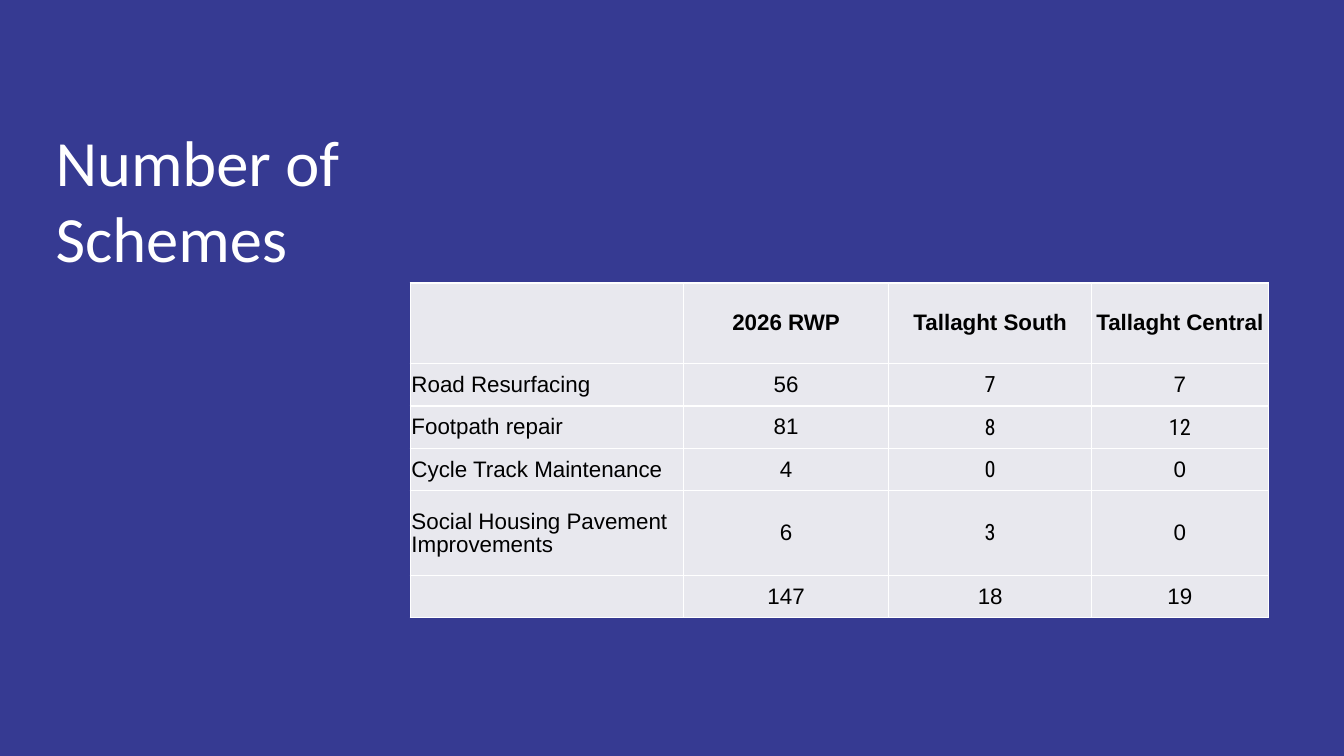
from lxml.etree import SubElement
from pptx import Presentation
from pptx.dml.color import RGBColor
from pptx.enum.text import MSO_ANCHOR, PP_ALIGN
from pptx.oxml.ns import qn
from pptx.util import Cm, Pt

# Content
TITLE = "Number of Schemes"
SCHEMES = [
    ("", "2026 RWP", "Tallaght South", "Tallaght Central"),
    ("Road Resurfacing", "56", "7", "7"),
    ("Footpath repair", "81", "8", "12"),
    ("Cycle Track Maintenance", "4", "0", "0"),
    ("Social Housing Pavement Improvements", "6", "3", "0"),
    ("", "147", "18", "19"),
]
CONDENSED_CELLS = {(1, 2), (2, 2), (3, 2), (4, 2), (2, 3)}

# Layout in centimetres
COLUMN_WIDTHS = (6.88, 5.18, 5.11, 4.45)
ROW_HEIGHTS = (2.03, 1.07, 1.07, 1.07, 2.13, 1.07)
TABLE_LEFT, TABLE_TOP = 10.34, 7.13

# Colours
NAVY, PALE, WHITE, BLACK = "363A92", "E8E8EE", "FFFFFF", "000000"


def paint(fill, colour):
    fill.solid()
    fill.fore_color.rgb = RGBColor.from_string(colour)


def style_font(paragraph, name, size, colour, bold=False):
    font = paragraph.font
    font.name, font.size, font.bold = name, Pt(size), bold
    font.color.rgb = RGBColor.from_string(colour)


def add_borders(cell, colour):
    properties = cell._tc.get_or_add_tcPr()
    for side in ("a:lnL", "a:lnR", "a:lnT", "a:lnB"):
        border = SubElement(properties, qn(side), w=str(Pt(1)))
        line_fill = SubElement(border, qn("a:solidFill"))
        SubElement(line_fill, qn("a:srgbClr"), val=colour)


def add_title(slide):
    title = slide.shapes.add_textbox(Cm(1.4), Cm(3.07), Cm(11.05), Cm(5.94))
    frame = title.text_frame
    frame.word_wrap = True
    frame.margin_left = frame.margin_right = frame.margin_bottom = 0
    frame.margin_top = Cm(0.1)
    heading = frame.paragraphs[0]
    heading.text = TITLE
    heading.line_spacing = 0.98
    style_font(heading, "Calibri", 46.1, WHITE)


def fill_cell(cell, text, row, column):
    cell.text = text
    cell.vertical_anchor = MSO_ANCHOR.MIDDLE
    cell.margin_left = cell.margin_right = cell.margin_top = Cm(0.03)
    cell.margin_bottom = 0
    paragraph = cell.text_frame.paragraphs[0]
    paragraph.alignment = PP_ALIGN.CENTER if column else PP_ALIGN.LEFT
    paragraph.line_spacing = 0.93
    name = "Roboto Condensed" if (row, column) in CONDENSED_CELLS else "Arial"
    style_font(paragraph, name, 16, BLACK, bold=row == 0)
    add_borders(cell, WHITE)
    paint(cell.fill, PALE)


def add_scheme_table(slide):
    table = slide.shapes.add_table(
        len(ROW_HEIGHTS), len(COLUMN_WIDTHS), Cm(TABLE_LEFT), Cm(TABLE_TOP),
        Cm(sum(COLUMN_WIDTHS)), Cm(sum(ROW_HEIGHTS))).table
    for column, width in zip(table.columns, COLUMN_WIDTHS):
        column.width = Cm(width)
    for row, height in zip(table.rows, ROW_HEIGHTS):
        row.height = Cm(height)
    for r, scheme in enumerate(SCHEMES):
        for c, text in enumerate(scheme):
            fill_cell(table.cell(r, c), text, r, c)


def main():
    deck = Presentation()
    deck.slide_width, deck.slide_height = Cm(33.87), Cm(19.05)
    slide = deck.slides.add_slide(deck.slide_layouts[6])
    paint(slide.background.fill, NAVY)
    add_title(slide)
    add_scheme_table(slide)
    deck.save("out.pptx")


if __name__ == "__main__":
    main()
